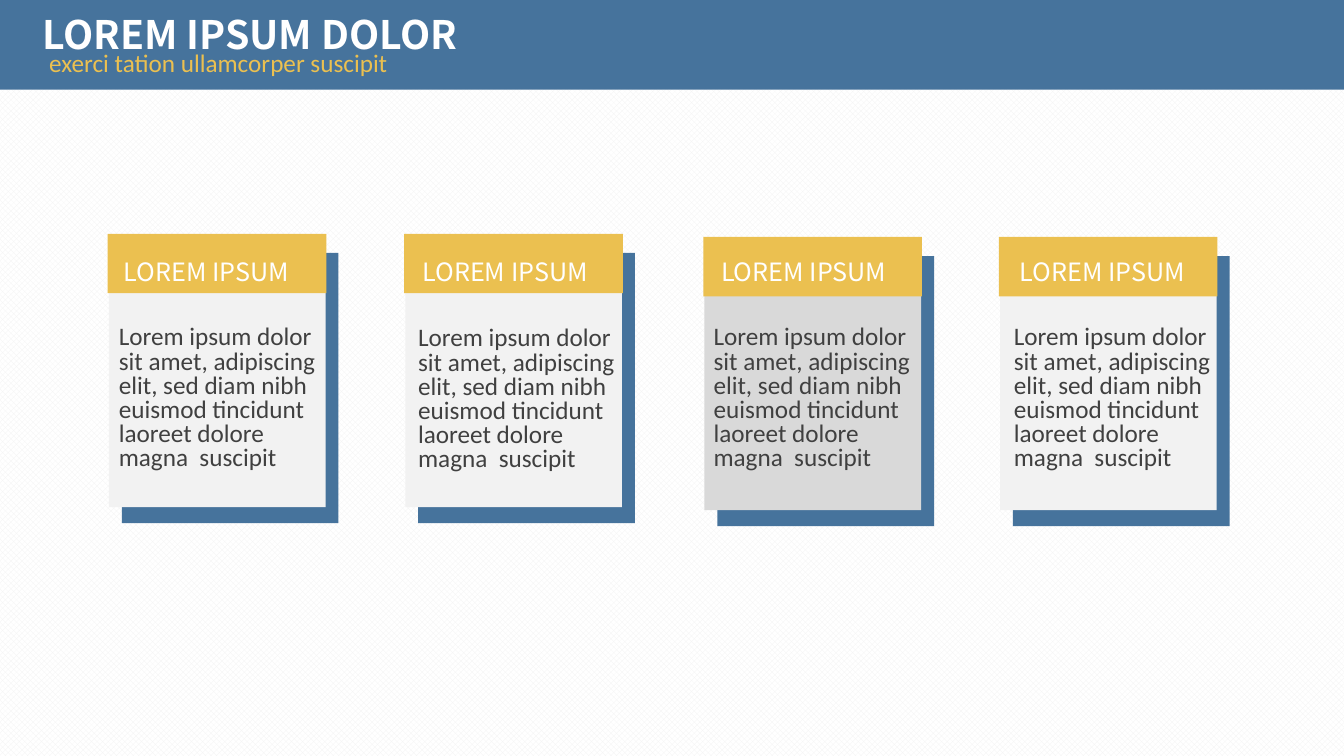
from dataclasses import dataclass

import pptx
import pptx.dml.color
import pptx.enum.dml
import pptx.enum.shapes
import pptx.enum.text
import pptx.util

Pt = pptx.util.Pt
RGBColor = pptx.dml.color.RGBColor

BLUE = RGBColor(0x46, 0x73, 0x9C)
GOLD = RGBColor(0xEB, 0xC0, 0x50)
WHITE = RGBColor(0xFF, 0xFF, 0xFF)
PALE_GRAY = RGBColor(0xF2, 0xF2, 0xF2)
MID_GRAY = RGBColor(0xD9, 0xD9, 0xD9)
DARK_GRAY = RGBColor(0x40, 0x40, 0x40)

HEADING_FONT = "Noto Sans CJK SC"
BODY_FONT = "Calibri"
CARD_HEADING = "LOREM IPSUM"
CARD_TEXT = ("Lorem ipsum dolor sit amet, adipiscing elit, sed diam nibh "
             "euismod tincidunt laoreet dolore magna  suscipit")

PANEL_WIDTH, PANEL_HEIGHT = 154.8, 193
HEADING_LEFT, HEADING_STEP = 81.4, 213.3


@dataclass(frozen=True)
class Box:
    left: float
    top: float
    width: float
    height: float

    def place(self, shape) -> None:
        shape.left, shape.top = Pt(self.left), Pt(self.top)
        shape.width, shape.height = Pt(self.width), Pt(self.height)


@dataclass(frozen=True)
class TextStyle:
    font: str
    color: RGBColor
    size: float = 18
    bold: bool = False
    line_spacing: float = 1.0
    wrap: bool = False
    alignment: pptx.enum.text.PP_ALIGN = pptx.enum.text.PP_ALIGN.LEFT


@dataclass(frozen=True)
class Card:
    left: float
    top: float
    text_left: float
    text_top: float = 229.7
    panel_color: RGBColor = PALE_GRAY


TITLE_STYLE = TextStyle(HEADING_FONT, WHITE, size=28, bold=True)
SUBTITLE_STYLE = TextStyle(BODY_FONT, GOLD, line_spacing=0.8,
                           alignment=pptx.enum.text.PP_ALIGN.JUSTIFY)
CARD_HEADING_STYLE = TextStyle(HEADING_FONT, WHITE)
CARD_TEXT_STYLE = TextStyle(BODY_FONT, DARK_GRAY, line_spacing=0.8, wrap=True)

CARDS = (
    Card(77, 167, 77.8),
    Card(288.7, 167, 291.6, text_top=230.4),
    Card(502.4, 169.2, 502.6, panel_color=MID_GRAY),
    Card(713.5, 169.2, 717.1),
)


def add_rectangle(shapes, box: Box, color: RGBColor) -> None:
    shape = shapes.add_shape(pptx.enum.shapes.MSO_SHAPE.RECTANGLE, 0, 0, 0, 0)
    box.place(shape)
    shape.shadow.inherit = False
    shape.fill.solid()
    shape.fill.fore_color.rgb = color
    shape.line.fill.background()


def write_text(shape, box: Box, text: str, style: TextStyle) -> None:
    box.place(shape)
    frame = shape.text_frame
    frame.word_wrap = style.wrap
    frame.auto_size = pptx.enum.text.MSO_AUTO_SIZE.SHAPE_TO_FIT_TEXT
    frame.vertical_anchor = pptx.enum.text.MSO_ANCHOR.TOP
    paragraph = frame.paragraphs[0]
    paragraph.alignment = style.alignment
    paragraph.line_spacing = style.line_spacing
    run = paragraph.add_run()
    run.text = text
    run.font.name = style.font
    run.font.size = Pt(style.size)
    run.font.bold = style.bold
    run.font.color.rgb = style.color


def add_text(slide, box: Box, text: str, style: TextStyle) -> None:
    write_text(slide.shapes.add_textbox(0, 0, 0, 0), box, text, style)


def add_card(slide, index: int, card: Card) -> None:
    group = slide.shapes.add_group_shape()
    for offset_x, offset_y, width, height, color in (
        (10, 13.7, PANEL_WIDTH, PANEL_HEIGHT, BLUE),
        (0.8, 2.2, PANEL_WIDTH, PANEL_HEIGHT, card.panel_color),
        (0, 0, 156.2, 42.5, GOLD),
    ):
        box = Box(card.left + offset_x, card.top + offset_y, width, height)
        add_rectangle(group.shapes, box, color)
    heading_box = Box(HEADING_LEFT + index * HEADING_STEP, 179.3, 146.9, 28.8)
    add_text(slide, heading_box, CARD_HEADING, CARD_HEADING_STYLE)
    text_box = Box(card.text_left, card.text_top, 168.5, 112.3)
    add_text(slide, text_box, CARD_TEXT, CARD_TEXT_STYLE)


def main() -> None:
    presentation = pptx.Presentation()
    presentation.slide_width, presentation.slide_height = Pt(960), Pt(540)
    slide = presentation.slides.add_slide(presentation.slide_layouts[5])

    # Patterned background
    background = slide.background.fill
    background.patterned()
    background.pattern = pptx.enum.dml.MSO_PATTERN.OUTLINED_DIAMOND
    background.fore_color.rgb = PALE_GRAY
    background.back_color.rgb = WHITE

    # Header band
    add_rectangle(slide.shapes, Box(0, 0, 960, 64.1), BLUE)

    # Cards
    for index, card in enumerate(CARDS):
        add_card(slide, index, card)

    # Title, brought in front of the band, and subtitle
    title = slide.shapes.title
    slide.shapes.element.append(title.element)
    write_text(title, Box(23, 3.6, 342, 41), "LOREM IPSUM DOLOR", TITLE_STYLE)
    add_text(slide, Box(28.1, 34.6, 259.2, 25.2),
             "exerci tation ullamcorper suscipit", SUBTITLE_STYLE)

    presentation.save("out.pptx")


if __name__ == "__main__":
    main()
